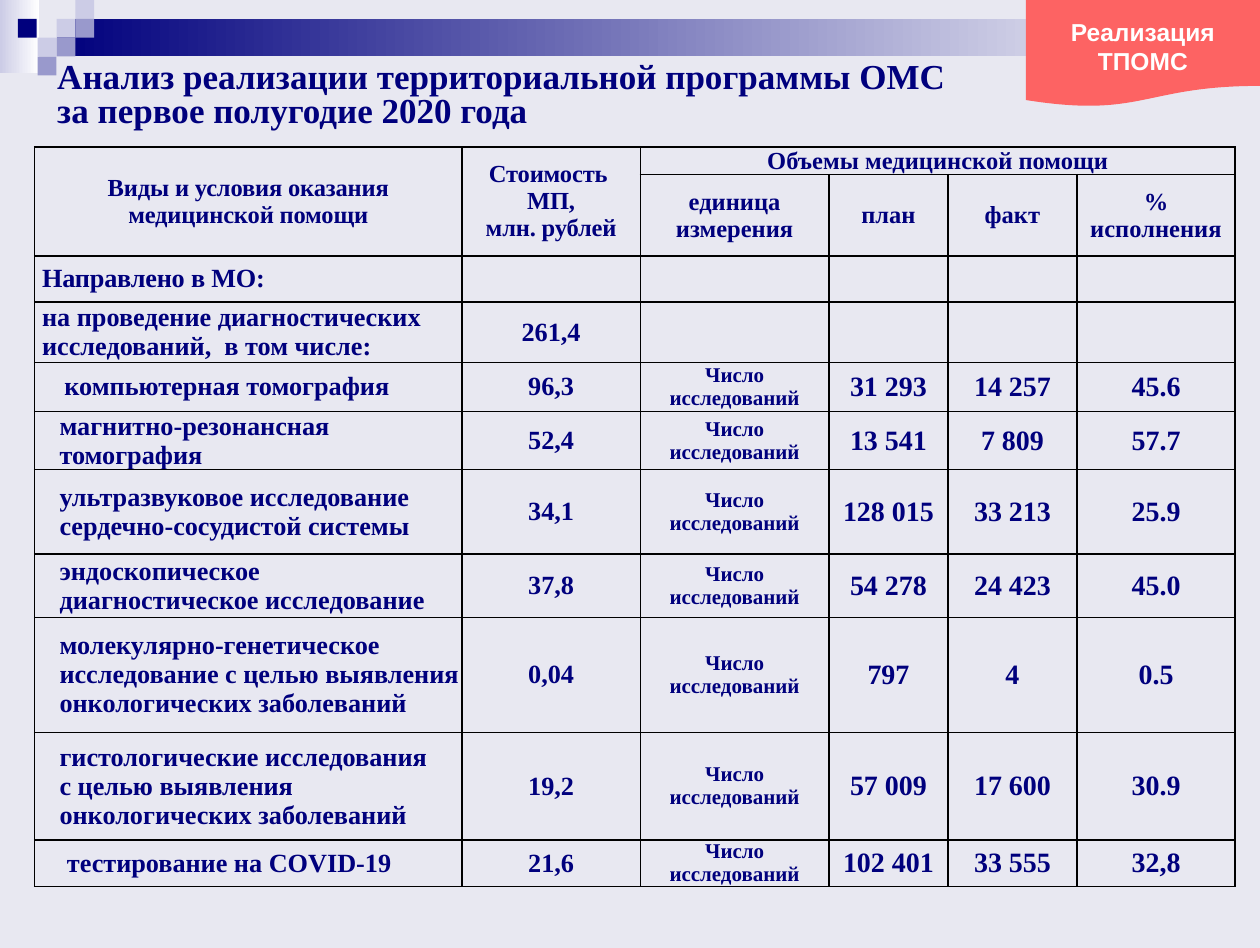
from lxml import etree
from pptx import Presentation
from pptx import util as u
from pptx.dml.color import RGBColor
from pptx.enum import shapes, text
from pptx.oxml import ns

NAVY, LILAC, VIOLET, WHITE = "00007D", "CCCCE6", "9999CC", "FFFFFF"


def rgb(value):
    return RGBColor.from_string(value)


def write(tf, content, size, font="Times New Roman", color=NAVY, align=text.PP_ALIGN.CENTER):
    tf.text = content
    tf.word_wrap = True
    for p in tf.paragraphs:
        p.alignment = align
        for r in p.runs:
            r.font.name, r.font.size, r.font.bold = font, u.Pt(size), True
            r.font.color.rgb = rgb(color)


prs = Presentation()
prs.slide_width, prs.slide_height = u.Cm(25.4), u.Cm(19.11)
s = prs.slides.add_slide(prs.slide_layouts[5])
s.background.fill.solid()
s.background.fill.fore_color.rgb = rgb("E8E8F1")

# Header decoration: left, top, width, height, colours (two make a gradient)
SIDE = 0.38
decor = [
    (0, 0, 0.79, 1.48, [LILAC, WHITE]),
    (1.14, SIDE, 24.26, 2 * SIDE, [NAVY, WHITE]),
    (1.14, SIDE, SIDE, SIDE, [LILAC]),
    (1.52, 0, SIDE, SIDE, [LILAC]),
    (1.52, SIDE, SIDE, SIDE, [VIOLET]),
    (0.76, 2 * SIDE, SIDE, SIDE, [LILAC]),
    (0.36, SIDE, SIDE, SIDE, [NAVY]),
    (1.14, 2 * SIDE, SIDE, SIDE, [VIOLET]),
    (0.76, 3 * SIDE, SIDE, SIDE, [VIOLET]),
]
for left, top, width, height, colors in decor:
    sp = s.shapes.add_shape(shapes.MSO_SHAPE.RECTANGLE,
                            u.Cm(left), u.Cm(top), u.Cm(width), u.Cm(height))
    sp.shadow.inherit = False
    sp.line.fill.background()
    if len(colors) == 1:
        sp.fill.solid()
        sp.fill.fore_color.rgb = rgb(colors[0])
    else:
        sp.fill.gradient()
        sp.fill.gradient_angle = 0
        for stop, color in zip(sp.fill.gradient_stops, colors):
            stop.color.rgb = rgb(color)

# Title
title = s.shapes.title
title.left, title.top, title.width, title.height = u.Cm(0.9), u.Cm(1.15), u.Cm(24), u.Cm(1.6)
tf = title.text_frame
write(tf, "Анализ реализации территориальной программы ОМС\vза первое полугодие 2020 года",
      20, align=text.PP_ALIGN.LEFT)
tf.auto_size = text.MSO_AUTO_SIZE.NONE
tf.vertical_anchor = text.MSO_ANCHOR.MIDDLE
tf.paragraphs[0].line_spacing = 0.8

# Table
UNIT = "Число исследований"
rows = [
    ["Виды и условия оказания\vмедицинской помощи", "Стоимость  МП,\vмлн. рублей",
     "Объемы медицинской помощи", "", "", ""],
    ["", "", "единица измерения", "план", "факт", "% исполнения"],
    ["Направлено в МО:", "", "", "", "", ""],
    ["на проведение диагностических исследований,  в том числе:", "261,4", "", "", "", ""],
    ["компьютерная томография", "96,3", UNIT, "31 293", "14 257", "45.6"],
    ["магнитно-резонансная томография", "52,4", UNIT, "13 541", "7 809", "57.7"],
    ["ультразвуковое исследование\vсердечно-сосудистой системы", "34,1", UNIT,
     "128 015", "33 213", "25.9"],
    ["эндоскопическое диагностическое исследование", "37,8", UNIT, "54 278", "24 423", "45.0"],
    ["молекулярно-генетическое исследование с целью выявления онкологических заболеваний",
     "0,04", UNIT, "797", "4", "0.5"],
    ["гистологические исследования\vс целью выявления онкологических заболеваний",
     "19,2", UNIT, "57 009", "17 600", "30.9"],
    ["тестирование на COVID-19", "21,6", UNIT, "102 401", "33 555", "32,8"],
]
widths = [8.61, 3.6, 3.8, 2.4, 2.6, 3.19]
heights = [0.56, 1.63, 0.93, 1.22, 0.99, 1.17, 1.7, 1.28, 2.32, 2.16, 0.94]
body_sizes = [15, 15, 12, 16, 16, 16]
FIRST_BODY, FIRST_ITEM = 2, 4
item_insets = {4: 0.1, 5: 0, 6: 0, 7: 0, 8: 0, 9: 0}
condensed = [(0, 0), (0, 1), (2, 0)]

table = s.shapes.add_table(len(rows), len(widths), u.Cm(0.7), u.Cm(2.96),
                           u.Cm(sum(widths)), u.Cm(sum(heights))).table
table.first_row = table.horz_banding = False
for column, width in zip(table.columns, widths):
    column.width = u.Cm(width)
for row, height in zip(table.rows, heights):
    row.height = u.Cm(height)

for i, row in enumerate(rows):
    for j, content in enumerate(row):
        cell = table.cell(i, j)
        is_label = j == 0 and i >= FIRST_BODY
        inset = item_insets.get(i, 0.15) if j == 0 else 0.15
        cell.margin_left = cell.margin_right = u.Cm(inset)
        cell.margin_top = cell.margin_bottom = 0
        cell.vertical_anchor = text.MSO_ANCHOR.MIDDLE
        write(cell.text_frame, content, body_sizes[j] if i >= FIRST_BODY else 14,
              align=text.PP_ALIGN.LEFT if is_label else text.PP_ALIGN.CENTER)
        p = cell.text_frame.paragraphs[0]
        if not content:
            p.font.size = u.Pt(12)
        if (i, j) in condensed:
            for r in p.runs:
                r._r.get_or_add_rPr().set("spc", "-10")
        if is_label and i >= FIRST_ITEM:
            p.space_before = u.Pt(6)
            pPr = p._p.get_or_add_pPr()
            pPr.set("marL", str(u.Cm(0.5)))
            pPr.set("indent", "0")
        tcPr = cell._tc.get_or_add_tcPr()
        for side in ("lnL", "lnR", "lnT", "lnB"):
            ln = etree.SubElement(tcPr, ns.qn("a:" + side), w=str(u.Pt(1)))
            fill = etree.SubElement(ln, ns.qn("a:solidFill"))
            etree.SubElement(fill, ns.qn("a:srgbClr"), val="000000")
        cell.fill.background()

table.cell(0, 0).merge(table.cell(1, 0))
table.cell(0, 1).merge(table.cell(1, 1))
table.cell(0, 2).merge(table.cell(0, 5))

# Corner tag
tag = s.shapes.add_shape(shapes.MSO_SHAPE.FLOWCHART_DOCUMENT,
                         u.Cm(20.68), 0, u.Cm(4.72), u.Cm(2.16))
tag.shadow.inherit = False
tag.fill.solid()
tag.fill.fore_color.rgb = rgb("FD6363")
tag.line.fill.background()
write(tag.text_frame, "Реализация ТПОМС", 14, "Arial", WHITE)
tag.text_frame.vertical_anchor = text.MSO_ANCHOR.MIDDLE
tag.text_frame.margin_top = u.Cm(0.25)

prs.save("out.pptx")
